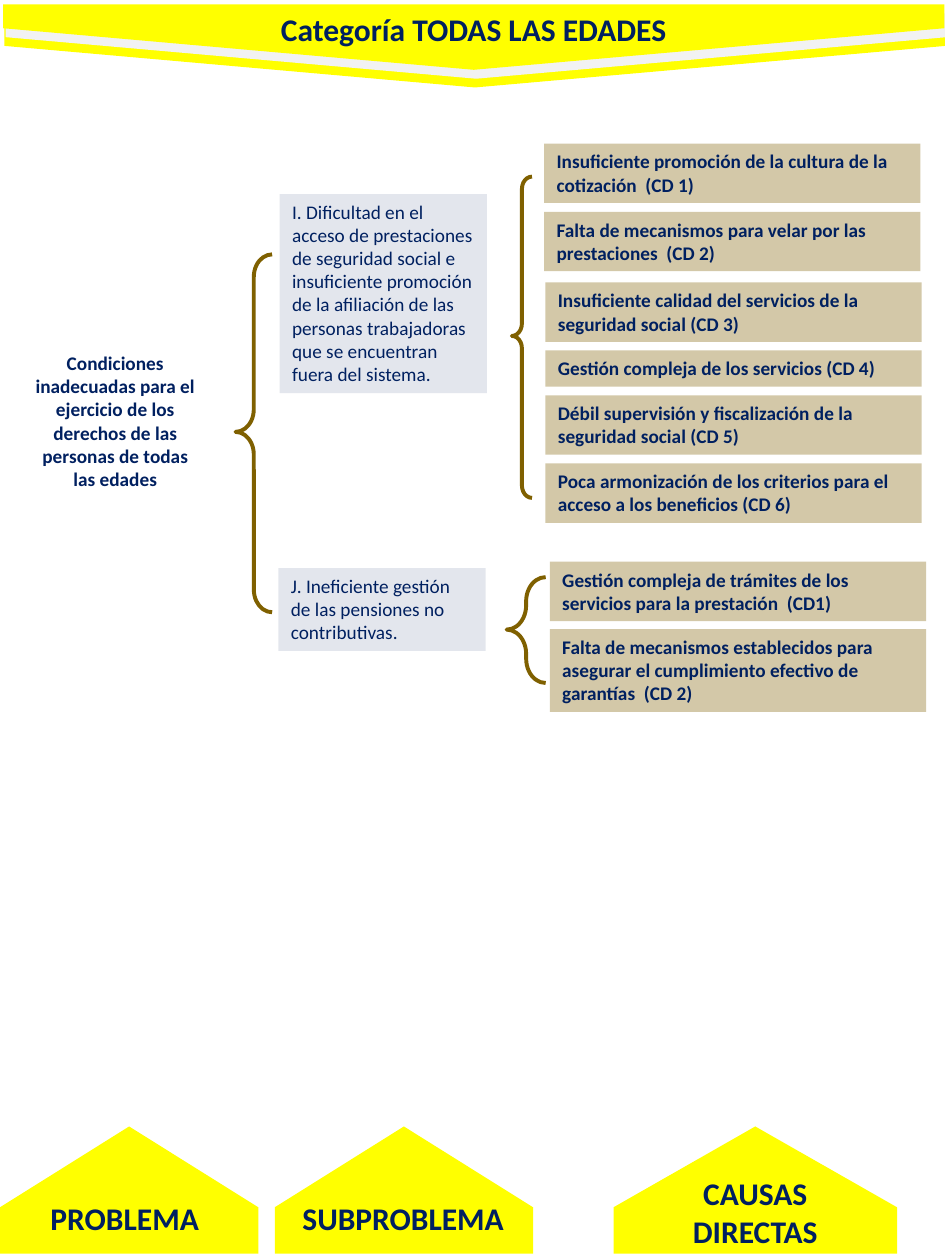
from lxml import etree
from pptx import Presentation
from pptx import util as u
from pptx.dml.color import RGBColor
from pptx.enum import shapes, text
from pptx.oxml import ns

NAVY, BROWN, YELLOW, GREY = "002060", "7F6000", "FFFF00", "F2F2F2"
KIND = shapes.MSO_SHAPE


def color(code):
    return RGBColor.from_string(code)


class Page:
    font = {"name": "Calibri", "size": u.Pt(11), "bold": True}
    frame = {
        "margin_left": u.Pt(7.2), "margin_right": u.Pt(7.2),
        "margin_top": u.Pt(3.6), "margin_bottom": u.Pt(3.6),
        "word_wrap": True, "vertical_anchor": text.MSO_ANCHOR.TOP,
    }

    def __init__(self, slide):
        self.items = slide.shapes

    def letter(self, shape, words, align, **style):
        for key, val in self.frame.items():
            setattr(shape.text_frame, key, val)
        para = shape.text_frame.paragraphs[0]
        para.alignment = align
        run = para.add_run()
        run.text = words
        for key, val in {**self.font, **style}.items():
            setattr(run.font, key, val)
        run.font.color.rgb = color(NAVY)

    def shape(self, kind, box, fill=None, alpha=None):
        item = self.items.add_shape(kind, *map(u.Pt, box))
        item.shadow.inherit = False
        item.line.fill.background()
        if fill:
            item.fill.solid()
            item.fill.fore_color.rgb = color(fill)
        else:
            item.fill.background()
        if alpha:
            tint = item.element.spPr.find(".//" + ns.qn("a:srgbClr"))
            etree.SubElement(tint, ns.qn("a:alpha"), val=str(alpha * 1000))
        return item

    def arrow(self, x, y, wide, high, turn, fill):
        """Block arrow turned a quarter; the box is the one seen on the page."""
        box = (x + (wide - high) / 2, y + (high - wide) / 2, high, wide)
        item = self.shape(KIND.RIGHT_ARROW, box, fill)
        item.adjustments[0], item.adjustments[1] = 1, 0.635
        item.rotation = turn

    def brace(self, *box):
        item = self.shape(KIND.LEFT_BRACE, box)
        item.adjustments[0], item.adjustments[1] = 0.619, 0.496
        item.line.color.rgb = color(BROWN)
        item.line.width = u.Pt(2.25)

    def card(self, x, y, wide, rows, words, fill, alpha, bold):
        box = (x, y, wide, 7.4 + 13.3 * rows)
        item = self.shape(KIND.RECTANGLE, box, fill, alpha)
        self.letter(item, words, text.PP_ALIGN.LEFT, bold=bold)

    def label(self, x, y, wide, high, words, size=18):
        item = self.items.add_textbox(*map(u.Pt, (x, y, wide, high)))
        self.letter(item, words, text.PP_ALIGN.CENTER, size=u.Pt(size))


def main():
    deck = Presentation()
    deck.slide_width, deck.slide_height = u.Pt(540), u.Pt(720)
    page = Page(deck.slides.add_slide(deck.slide_layouts[6]))

    # Header banner
    for x, y, fill in ((2.5, 12.6, YELLOW), (3.2, 7.6, GREY), (1.8, 2.5, YELLOW)):
        page.arrow(x, y, 537.8, 37.4, 90, fill)
    page.label(123.8, 2.2, 293.8, 28.8, "Categoría TODAS LAS EDADES")

    # Problem
    page.label(11.5, 197.3, 108.7, 87.1,
               "Condiciones inadecuadas para el ejercicio de los derechos "
               "de las personas de todas las edades", 11)

    # Subproblems
    for x, y, rows, words in (
        (159.8, 110.9, 8, "I. Dificultad en el acceso de prestaciones de seguridad "
         "social e insuficiente promoción de la afiliación de las personas "
         "trabajadoras que se encuentran fuera del sistema."),
        (159.1, 324.7, 3, "J. Ineficiente gestión de las pensiones no contributivas."),
    ):
        page.card(x, y, 118.4, rows, words, NAVY, 11, False)

    # Direct causes
    for x, y, rows, words in (
        (311, 82, 2, "Insuficiente promoción de la cultura de la cotización  (CD 1)"),
        (311, 121, 2, "Falta de mecanismos para velar por las prestaciones  (CD 2)"),
        (311.7, 161.4, 2, "Insuficiente calidad del servicios de la seguridad social (CD 3)"),
        (311.7, 200.3, 1, "Gestión compleja de los servicios (CD 4)"),
        (311.7, 225.9, 2, "Débil supervisión y fiscalización de la seguridad social (CD 5)"),
        (311.7, 264.8, 2, "Poca armonización de los criterios para el acceso a los "
         "beneficios (CD 6)"),
        (314.2, 321, 2, "Gestión compleja de trámites de los servicios para la "
         "prestación  (CD1)"),
        (314.2, 359.5, 3, "Falta de mecanismos establecidos para asegurar el "
         "cumplimiento efectivo de garantías  (CD 2)"),
    ):
        page.card(x, y, 215, rows, words, BROWN, 34, True)

    # Braces
    page.brace(134.6, 145.4, 20.9, 204.5)
    page.brace(292.5, 100.9, 11.5, 183.6)
    page.brace(289.5, 329.8, 22.3, 60.5)

    # Footer: column names on arrows
    for x, wide in ((0, 147.6), (157, 147.6), (350.6, 162)):
        page.arrow(x, 643.7, wide, 72.7, 270, YELLOW)
    page.label(10.1, 681.8, 122.4, 28.8, "PROBLEMA")
    page.label(161.3, 681.8, 138.2, 28.8, "SUBPROBLEMA")
    page.label(379.4, 667.4, 104.4, 51.1, "CAUSAS DIRECTAS")

    deck.save("out.pptx")


if __name__ == "__main__":
    main()
